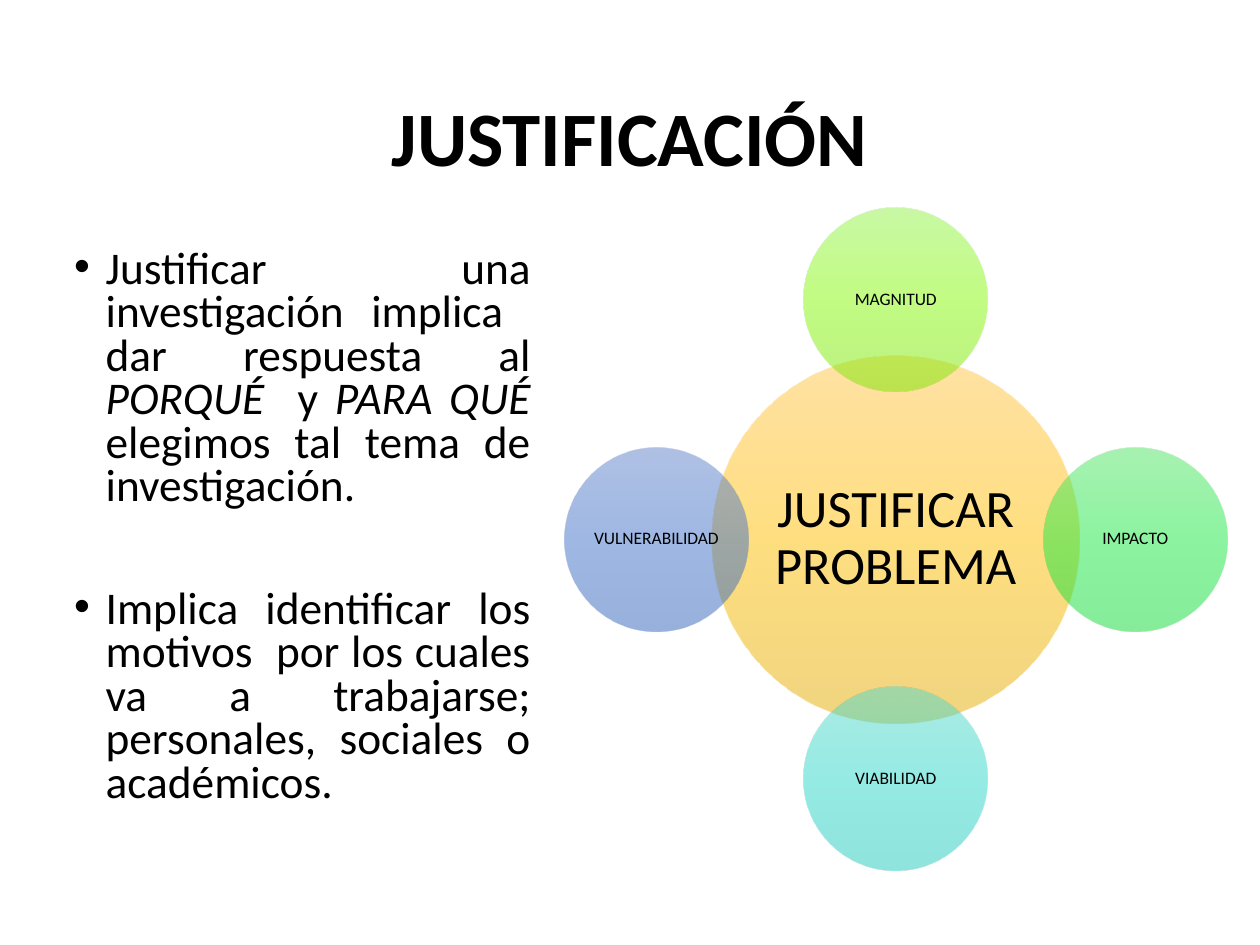
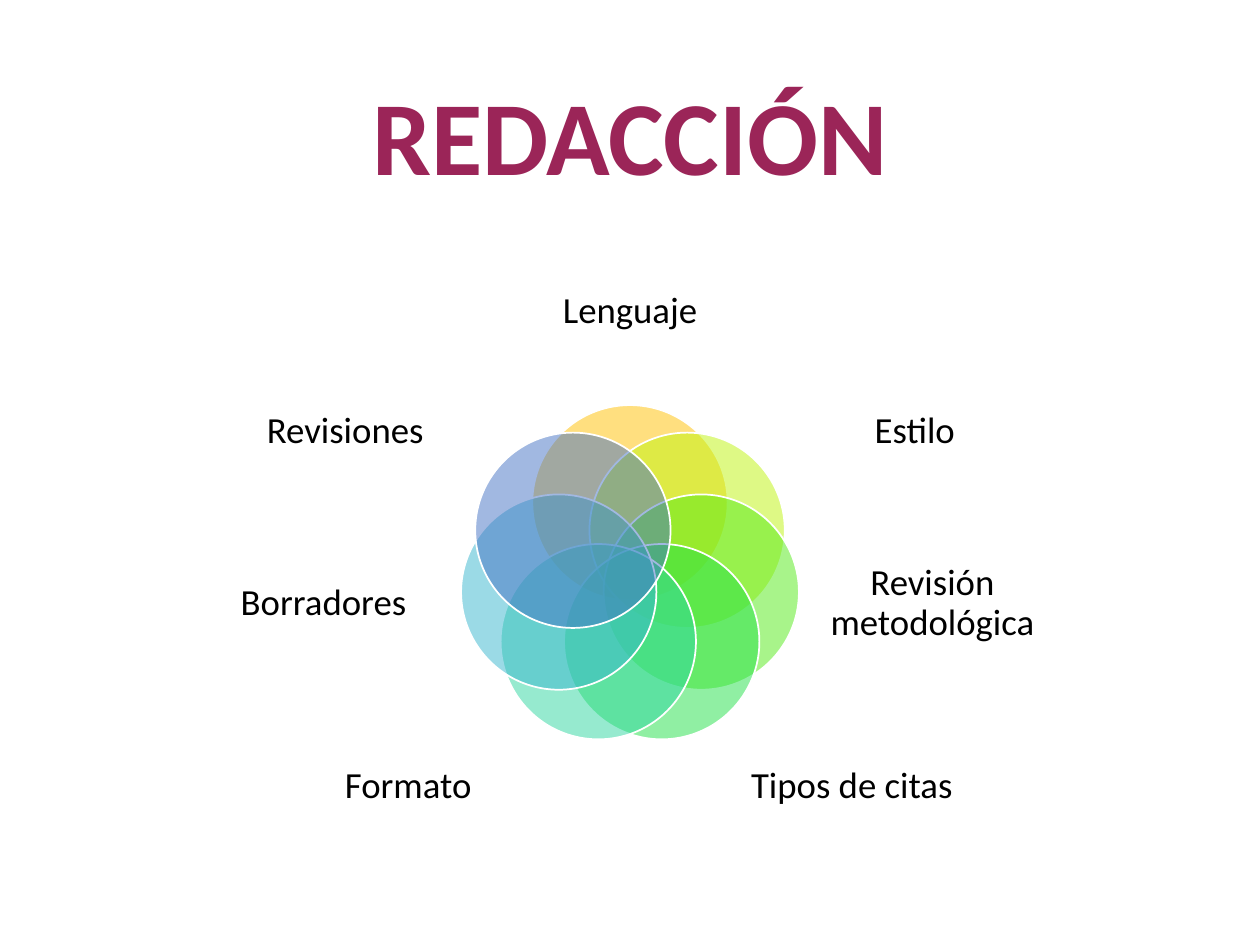
from math import cos, radians, sin

from pptx import Presentation
from pptx import util as u
from pptx.dml.color import RGBColor
from pptx.enum import shapes, text
from pptx.oxml import parse_xml
from pptx.oxml.ns import nsdecls

FONT = "Calibri"
BLACK, WHITE, PLUM = "000000", "FFFFFF", "9B2558"
MID = {"vertical_anchor": text.MSO_ANCHOR.MIDDLE}
TITLE = (0.69, 0.4, 8.62, 1.45)


def write(shape, paras, size, hue=BLACK, inset=None, bold=False, gap=0.9,
          align=text.PP_ALIGN.CENTER, frame=MID):
    """Fill a shape with paragraphs, each a list of (words, italic) runs."""
    tf = shape.text_frame
    form = {"word_wrap": True, **frame}
    if inset is not None:
        for side in ("left", "top", "right", "bottom"):
            form["margin_" + side] = u.Inches(inset)
    for key, val in form.items():
        setattr(tf, key, val)
    for i, runs in enumerate(paras):
        par = tf.add_paragraph() if i else tf.paragraphs[0]
        par.alignment, par.line_spacing = align, gap
        for words, slant in runs:
            run = par.add_run()
            run.text = words
            look = {"name": FONT, "size": u.Pt(size), "bold": bold, "italic": slant}
            for key, val in look.items():
                setattr(run.font, key, val)
            run.font.color.rgb = RGBColor.from_string(hue)
    return tf


def disc(slide, x, y, wide, hues):
    """Add a half-clear circle centred on x, y: one hue is flat, more make a gradient."""
    shape = slide.shapes.add_shape(
        shapes.MSO_SHAPE.OVAL, u.Inches(x - wide / 2), u.Inches(y - wide / 2),
        u.Inches(wide), u.Inches(wide))
    shape.shadow.inherit = False
    shape.line.fill.background()
    inks = [f'<a:srgbClr val="{hue}"><a:alpha val="50000"/></a:srgbClr>' for hue in hues]
    if len(inks) == 1:
        xml = f'<a:solidFill {nsdecls("a")}>{inks[0]}</a:solidFill>'
    else:
        step = 100000 // (len(inks) - 1)
        stops = "".join(f'<a:gs pos="{i * step}">{ink}</a:gs>' for i, ink in enumerate(inks))
        xml = (f'<a:gradFill {nsdecls("a")} rotWithShape="1"><a:gsLst>{stops}</a:gsLst>'
               '<a:lin ang="5400000" scaled="0"/></a:gradFill>')
    shape.fill.solid()
    props = shape.element.spPr
    old = props.find("{*}solidFill")
    props.replace(old, parse_xml(xml))
    return shape


deck = Presentation()
deck.slide_width, deck.slide_height = u.Inches(10), u.Inches(7.5)
pages = []
for name, size, hue in (("JUSTIFICACIÓN", 44, BLACK), ("REDACCIÓN", 60, PLUM)):
    page = deck.slides.add_slide(deck.slide_layouts[6])
    box = page.shapes.add_textbox(*map(u.Inches, TITLE))
    write(box, [[(name, False)]], size, hue, bold=True)
    pages.append(page)
why, draft = pages

# Slide 1: reasons on the left, radial diagram on the right
points = [
    [("Justificar una investigación implica  dar respuesta al ", False),
     ("PORQUÉ ", True), (" y ", False), ("PARA QUÉ ", True),
     ("elegimos tal tema de investigación.", False)],
    [("Implica identificar los motivos  por los cuales va a trabajarse; "
      "personales, sociales o académicos.", False)],
]
box = why.shapes.add_textbox(*map(u.Inches, (0.49, 1.93, 3.82, 4.83)))
body = write(box, points, 25.9, gap=0.8, align=text.PP_ALIGN.JUSTIFY, frame={})
for par, space in zip(body.paragraphs, (10, 45)):
    par.space_before = u.Pt(space)
    props = par._p.get_or_add_pPr()
    props.set("marL", str(u.Inches(0.25)))
    props.set("indent", str(u.Inches(-0.25)))
    props.append(parse_xml(f'<a:buFont {nsdecls("a")} typeface="Arial"/>'))
    props.append(parse_xml(f'<a:buChar {nsdecls("a")} char="•"/>'))

hub_x, hub_y, reach = 7.11, 4.28, 1.9
hub = disc(why, hub_x, hub_y, 2.92, ("FFC64B", "FFC000", "E3AB00"))
write(hub, [[("JUSTIFICAR PROBLEMA", False)]], 30, inset=0.04)
moons = (
    ("MAGNITUD", ("94F44C", "87FB06", "78E500")),
    ("IMPACTO", ("51E663", "19EA42", "0CDB34")),
    ("VIABILIDAD", ("58D8CC", "2BDACC", "1ECBBD")),
    ("VULNERABILIDAD", ("6183CB", "3E70CA", "3062BB")),
)
for i, (name, hues) in enumerate(moons):
    turn = radians(i * 360 / len(moons))
    moon = disc(why, hub_x + reach * sin(turn), hub_y - reach * cos(turn), 1.46, hues)
    write(moon, [[(name, False)]], 10, inset=0.01)

# Slide 2: ring of petals, labels mirrored about the middle
# name, hue, label centre from the middle, top, width, height
petals = (
    ("Lenguaje", "FFC000", 0, 2, 1.78, 0.95),
    ("Estilo", "BEF50C", 2.26, 2.9, 1.68, 1.05),
    ("Revisión metodológica", "53EB17", 2.4, 4.23, 1.65, 1.12),
    ("Tipos de citas", "23E148", 1.76, 5.73, 1.78, 1.02),
    ("Formato", "2ED7A1", -1.76, 5.73, 1.78, 1.02),
    ("Borradores ", "39B6CE", -2.4, 4.23, 1.65, 1.12),
    ("Revisiones", "4472C4", -2.26, 2.9, 1.68, 1.05),
)
mid_x, mid_y, ring = 5, 4.57, 0.58
for i, (name, hue, off, top, wide, high) in enumerate(petals):
    turn = radians(i * 360 / len(petals))
    petal = disc(draft, mid_x + ring * sin(turn), mid_y - ring * cos(turn), 1.55, (hue,))
    petal.line.color.rgb = RGBColor.from_string(WHITE)
    petal.line.width = u.Pt(1)
    spot = (mid_x + off - wide / 2, top, wide, high)
    box = draft.shapes.add_textbox(*map(u.Inches, spot))
    write(box, [[(name, False)]], 21, inset=0)

deck.save("out.pptx")
